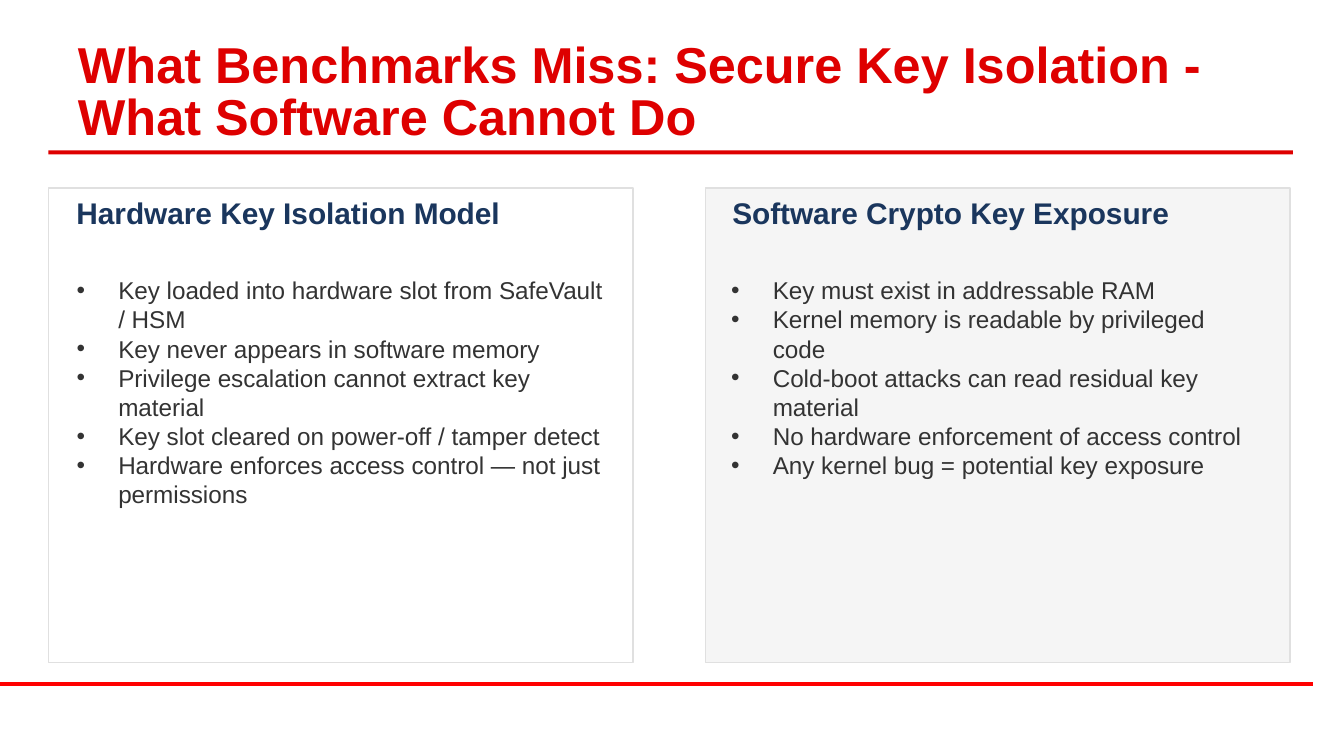
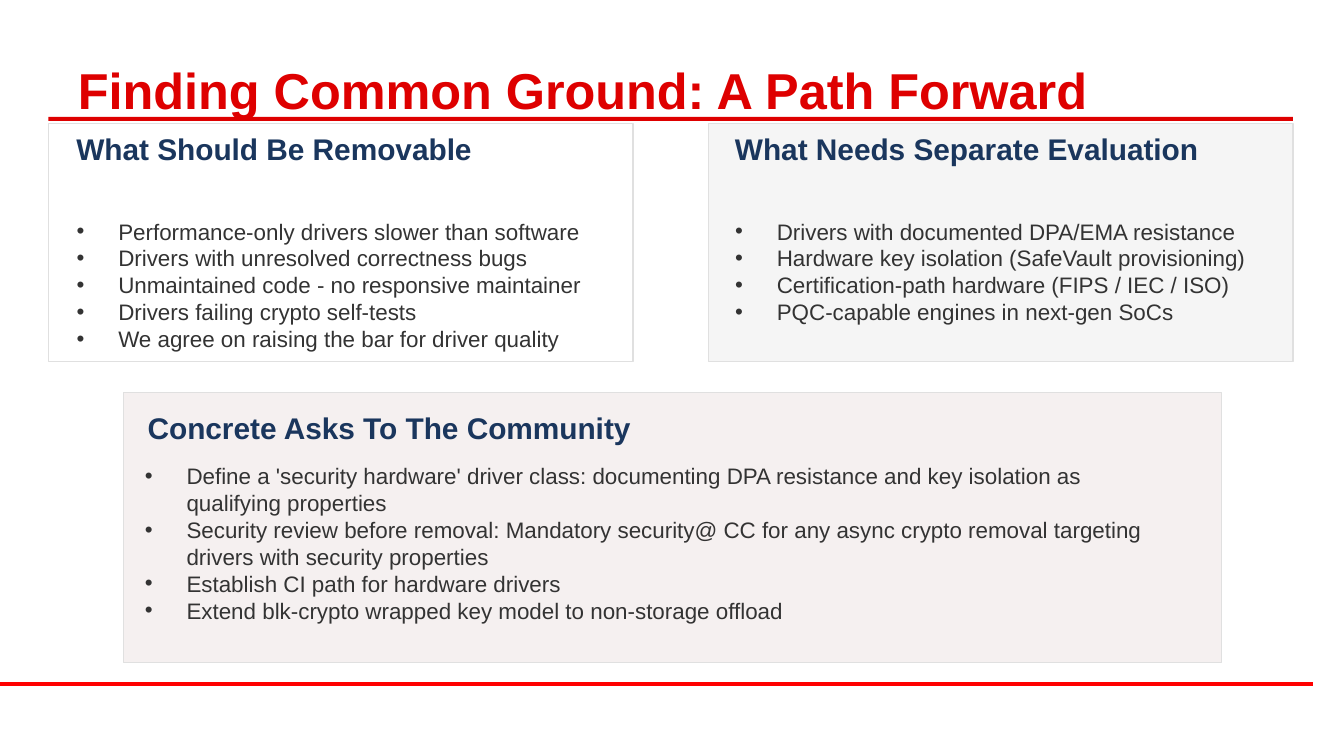
from dataclasses import dataclass

from lxml import etree
from pptx import Presentation
from pptx.dml.color import RGBColor
from pptx.enum.shapes import MSO_CONNECTOR, MSO_SHAPE
from pptx.enum.text import MSO_ANCHOR, MSO_AUTO_SIZE, PP_ALIGN
from pptx.oxml.ns import qn
from pptx.util import Inches, Pt

RECTANGLE = MSO_SHAPE.RECTANGLE
STRAIGHT = MSO_CONNECTOR.STRAIGHT
LEFT = PP_ALIGN.LEFT
TOP, MIDDLE = MSO_ANCHOR.TOP, MSO_ANCHOR.MIDDLE
NO_FIT, GROW = MSO_AUTO_SIZE.NONE, MSO_AUTO_SIZE.SHAPE_TO_FIT_TEXT


@dataclass(frozen=True)
class Theme:
    font: str = "Arial"
    title: str = "DE0000"
    footer: str = "FF0000"
    heading: str = "1A365D"
    body: str = "333333"
    border: str = "E0E0E0"
    white: str = "FFFFFF"
    gray: str = "F5F5F5"
    blush: str = "F5F0F0"
    title_size: int = 27
    heading_size: int = 16


THEME = Theme()
COLUMN_WIDTH, TEXT_WIDTH, HEADING_HEIGHT = 4.35, 4.15, 0.72

# Slide content; each panel has its own frame, heading and list areas
SLIDES = [
    {
        "title": "What Benchmarks Miss: Secure Key Isolation - What Software Cannot Do",
        "rule_top": 1.12,
        "list_size": 13,
        "panels": [
            {
                "fill": THEME.white,
                "frame": (0.36, 1.4, COLUMN_WIDTH, 3.53),
                "heading_area": (0.47, 1.4, TEXT_WIDTH, HEADING_HEIGHT),
                "list_area": (0.47, 2, TEXT_WIDTH, 2.8),
                "heading": "Hardware Key Isolation Model",
                "items": [
                    "Key loaded into hardware slot from SafeVault / HSM",
                    "Key never appears in software memory",
                    "Privilege escalation cannot extract key material",
                    "Key slot cleared on power-off / tamper detect",
                    "Hardware enforces access control — not just permissions",
                ],
            },
            {
                "fill": THEME.gray,
                "frame": (5.25, 1.4, COLUMN_WIDTH, 3.53),
                "heading_area": (5.35, 1.4, TEXT_WIDTH, HEADING_HEIGHT),
                "list_area": (5.34, 2, TEXT_WIDTH, 2.78),
                "heading": "Software Crypto Key Exposure",
                "items": [
                    "Key must exist in addressable RAM",
                    "Kernel memory is readable by privileged code",
                    "Cold-boot attacks can read residual key material",
                    "No hardware enforcement of access control",
                    "Any kernel bug = potential key exposure",
                ],
            },
        ],
    },
    {
        "title": "Finding Common Ground: A Path Forward",
        "rule_top": 0.87,
        "list_size": 12,
        "panels": [
            {
                "fill": THEME.white,
                "frame": (0.36, 0.92, COLUMN_WIDTH, 1.77),
                "heading_area": (0.47, 0.92, TEXT_WIDTH, HEADING_HEIGHT),
                "list_area": (0.47, 1.57, TEXT_WIDTH, 1.13),
                "heading": "What Should Be Removable",
                "items": [
                    "Performance-only drivers slower than software",
                    "Drivers with unresolved correctness bugs",
                    "Unmaintained code - no responsive maintainer",
                    "Drivers failing crypto self-tests",
                    "We agree on raising the bar for driver quality",
                ],
            },
            {
                "fill": THEME.gray,
                "frame": (5.27, 0.92, COLUMN_WIDTH, 1.77),
                "heading_area": (5.37, 0.92, TEXT_WIDTH, HEADING_HEIGHT),
                "list_area": (5.37, 1.57, TEXT_WIDTH, 0.96),
                "heading": "What Needs Separate Evaluation",
                "items": [
                    "Drivers with documented DPA/EMA resistance",
                    "Hardware key isolation (SafeVault provisioning)",
                    "Certification-path hardware (FIPS / IEC / ISO)",
                    "PQC-capable engines in next-gen SoCs",
                ],
            },
            {
                "fill": THEME.blush,
                "frame": (0.92, 2.92, 8.17, 2.01),
                "heading_area": (1, 3, TEXT_WIDTH, 0.44),
                "list_area": (0.98, 3.39, 7.86, 1.31),
                "heading": "Concrete Asks To The Community",
                "items": [
                    "Define a 'security hardware' driver class: documenting DPA resistance "
                    "and key isolation as qualifying properties",
                    "Security review before removal: Mandatory security@ CC for any async "
                    "crypto removal targeting drivers with security properties",
                    "Establish CI path for hardware drivers",
                    "Extend blk-crypto wrapped key model to non-storage offload",
                ],
            },
        ],
    },
]


def write_text(box, area, lines, size, color, bold=False, bullets=False):
    """Place a text box or placeholder and fill it, one paragraph per line."""
    box.left, box.top, box.width, box.height = map(Inches, area)
    frame = box.text_frame
    frame.word_wrap = True
    frame.auto_size = NO_FIT
    frame.vertical_anchor = TOP
    for index, line in enumerate(lines):
        para = frame.add_paragraph() if index else frame.paragraphs[0]
        para.alignment = LEFT
        para.space_before = Pt(0)
        if bullets:
            properties = para._p.get_or_add_pPr()
            properties.set("marL", str(Inches(0.31)))
            properties.set("indent", str(-Inches(0.31)))
            etree.SubElement(properties, qn("a:buFont"), typeface=THEME.font)
            etree.SubElement(properties, qn("a:buChar"), char="•")
        span = para.add_run()
        span.text = line
        span.font.name = THEME.font
        span.font.size = Pt(size)
        span.font.bold = bold
        span.font.color.rgb = RGBColor.from_string(color)
    return frame


def add_rectangle(page, area, fill, border=None):
    box = page.shapes.add_shape(RECTANGLE, *map(Inches, area))
    box.shadow.inherit = False
    box.fill.solid()
    box.fill.fore_color.rgb = RGBColor.from_string(fill)
    if border:
        box.line.color.rgb = RGBColor.from_string(border)
        box.line.width = Pt(0.75)
    else:
        box.line.fill.background()


# Widescreen deck, 16:9
deck = Presentation()
deck.slide_width = Inches(10)
deck.slide_height = deck.slide_width * 9 // 16
two_content = deck.slide_layouts[3]

for number, content in enumerate(SLIDES):
    page = deck.slides.add_slide(two_content)

    # Footer line, moved to the master so every slide shares it
    if number == 0:
        footer = page.shapes.add_connector(
            STRAIGHT, Inches(0), Inches(5.09), Inches(9.77), Inches(5.09))
        footer.line.color.rgb = RGBColor.from_string(THEME.footer)
        footer.line.width = Pt(2.25)
        etree.SubElement(footer.element.spPr, qn("a:effectLst"))
        deck.slide_master.shapes.element.append(footer.element)

    # Title and the rule beneath it
    frame = write_text(page.shapes.title, (0.5, 0.23, 9, 0.94), [content["title"]],
                       THEME.title_size, THEME.title, bold=True)
    frame.vertical_anchor = MIDDLE
    frame.margin_left = frame.margin_right = Inches(0.08)
    frame.margin_top = frame.margin_bottom = Inches(0.04)
    frame.paragraphs[0].line_spacing = 0.85
    add_rectangle(page, (0.36, content["rule_top"], 9.26, 0.03), THEME.title)

    # Panels: the two columns use the body placeholders, a third gets a text box
    bodies = [page.placeholders[1], page.placeholders[2]]
    for panel in content["panels"]:
        add_rectangle(page, panel["frame"], panel["fill"], THEME.border)
        heading = page.shapes.add_textbox(0, 0, 0, 0)
        write_text(heading, panel["heading_area"], [panel["heading"]],
                   THEME.heading_size, THEME.heading, bold=True)
        in_column = bool(bodies)
        box = bodies.pop(0) if in_column else page.shapes.add_textbox(0, 0, 0, 0)
        page.shapes.element.append(box.element)  # bring in front of its panel
        frame = write_text(box, panel["list_area"], panel["items"],
                           content["list_size"], THEME.body, bullets=True)
        if not in_column:
            frame.auto_size = GROW

deck.save("out.pptx")
